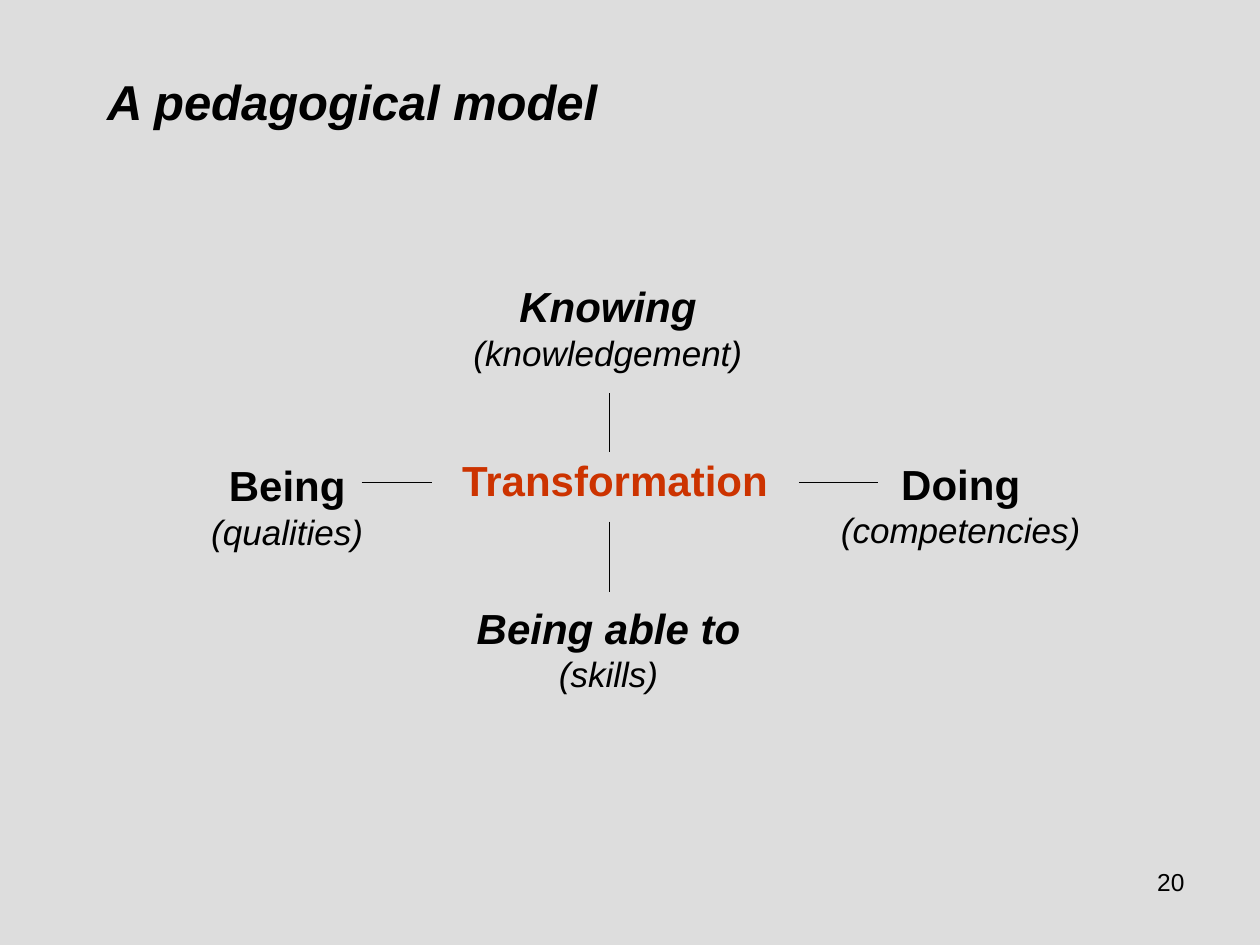
from dataclasses import dataclass

from lxml.etree import SubElement
from pptx import Presentation
from pptx.dml.color import RGBColor
from pptx.enum.shapes import MSO_CONNECTOR
from pptx.enum.text import MSO_ANCHOR, MSO_AUTO_SIZE, PP_ALIGN
from pptx.oxml.ns import qn
from pptx.util import Inches, Pt


@dataclass(frozen=True)
class Theme:
    font: str = "Arial"
    background: RGBColor = RGBColor(0xDD, 0xDD, 0xDD)
    ink: RGBColor = RGBColor(0, 0, 0)
    accent: RGBColor = RGBColor(0xCC, 0x33, 0x00)
    title: Pt = Pt(28)
    heading: Pt = Pt(24)
    detail: Pt = Pt(20)
    number: Pt = Pt(14)
    line: Pt = Pt(0.75)


THEME = Theme()


def write(para, text, size, color=THEME.ink, bold=False, italic=False, align=PP_ALIGN.CENTER):
    para.alignment = align
    span = para.add_run()
    span.text = text
    span.font.name = THEME.font
    span.font.size = size
    span.font.color.rgb = color
    span.font.bold = bold
    span.font.italic = italic


def prepare_frame(shape):
    frame = shape.text_frame
    frame.word_wrap = True
    frame.auto_size = MSO_AUTO_SIZE.NONE
    frame.vertical_anchor = MSO_ANCHOR.TOP
    return frame


def add_frame(page, box):
    return prepare_frame(page.shapes.add_textbox(*map(Inches, box)))


def add_title(page, box, text):
    title = page.shapes.title
    title.left, title.top, title.width, title.height = map(Inches, box)
    para = prepare_frame(title).paragraphs[0]
    write(para, text, THEME.title, bold=True, italic=True, align=PP_ALIGN.LEFT)


def add_concept(page, box, heading, detail, italic):
    frame = add_frame(page, box)
    write(frame.paragraphs[0], heading, THEME.heading, bold=True, italic=italic)
    write(frame.add_paragraph(), detail, THEME.detail, italic=True)


def add_link(page, start, end):
    link = page.shapes.add_connector(MSO_CONNECTOR.STRAIGHT, *map(Inches, start + end))
    link.line.color.rgb = THEME.ink
    link.line.width = THEME.line
    SubElement(link.element.spPr, qn("a:effectLst"))


def add_model(page, box):
    left, top, width, height = box
    text_height = 0.83
    center = add_frame(page, (left + 2.36, top + 1.38, 2.68, 0.5))
    write(center.paragraphs[0], "Transformation", THEME.heading, THEME.accent, bold=True)

    concepts = [
        ("Being", "(qualities)", False, 0, 1.42, 2.2),
        ("Knowing", "(knowledgement)", True, 2.25, 0, 2.79),
        ("Doing", "(competencies)", False, width - 2.47, 1.41, 2.47),
        ("Being able to", "(skills)", True, 2.25, height - text_height, 2.8),
    ]
    for heading, detail, italic, across, down, text_width in concepts:
        place = (left + across, top + down, text_width, text_height)
        add_concept(page, place, heading, detail, italic)

    axis_x, axis_y = left + 3.66, top + 1.65
    for start, end in [(0.94, 1.41), (1.96, 2.52)]:
        add_link(page, (axis_x, top + start), (axis_x, top + end))
    for start, end in [(1.69, 2.25), (5.16, 5.79)]:
        add_link(page, (left + start, axis_y), (left + end, axis_y))


def add_page_number(page, box, text):
    para = add_frame(page, box).paragraphs[0]
    write(para, text, THEME.number, align=PP_ALIGN.RIGHT)


def main():
    deck = Presentation()
    deck.slide_width, deck.slide_height = Inches(10), Inches(7.5)
    page = deck.slides.add_slide(deck.slide_layouts[5])
    page.background.fill.solid()
    page.background.fill.fore_color.rgb = THEME.background
    add_title(page, (0.75, 0.52, 4.41, 0.57), "A pedagogical model")
    add_model(page, (1.18, 2.18, 7.68, 3.38))
    add_page_number(page, (7.17, 6.83, 2.33, 0.52), "20")
    deck.save("out.pptx")


if __name__ == "__main__":
    main()
